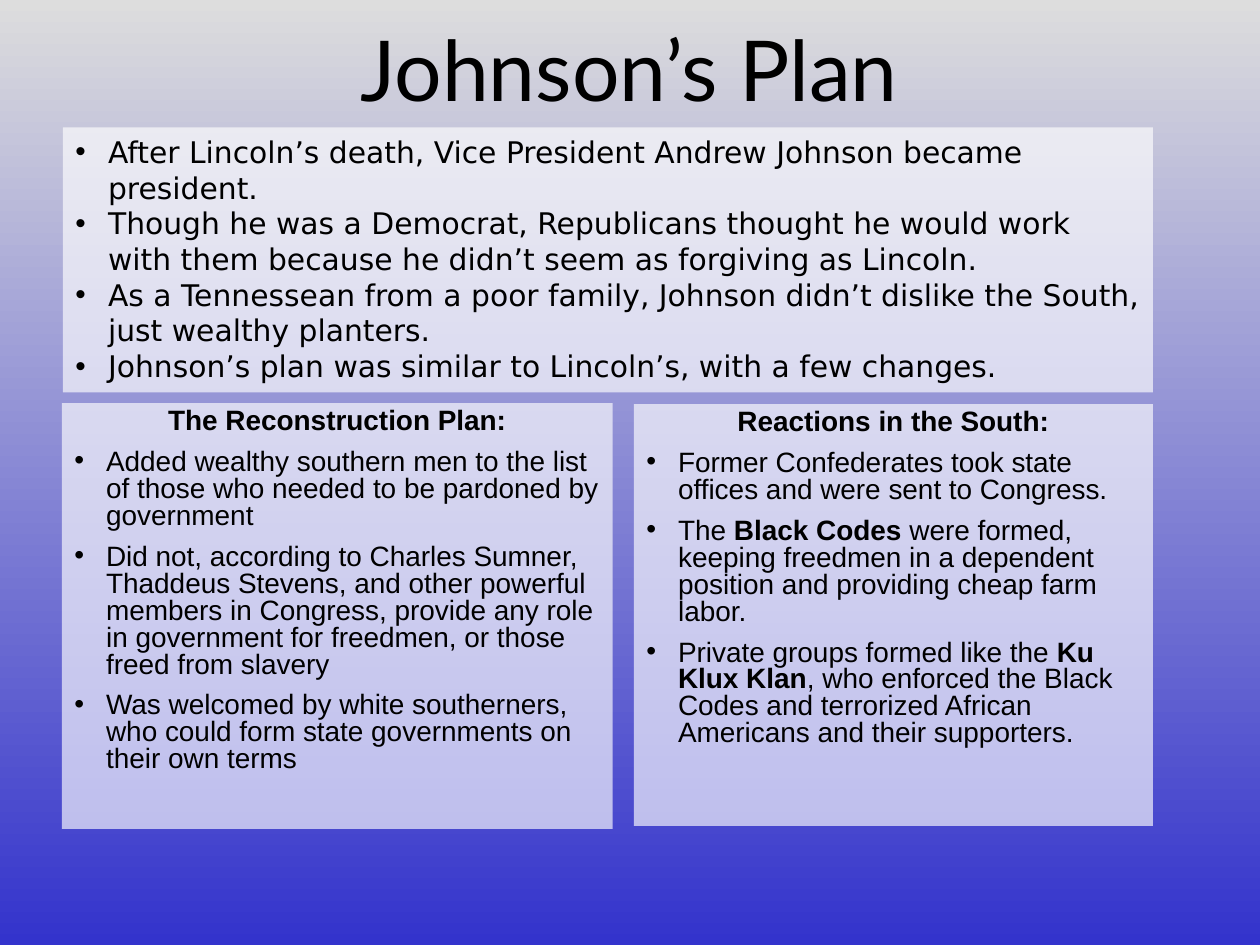
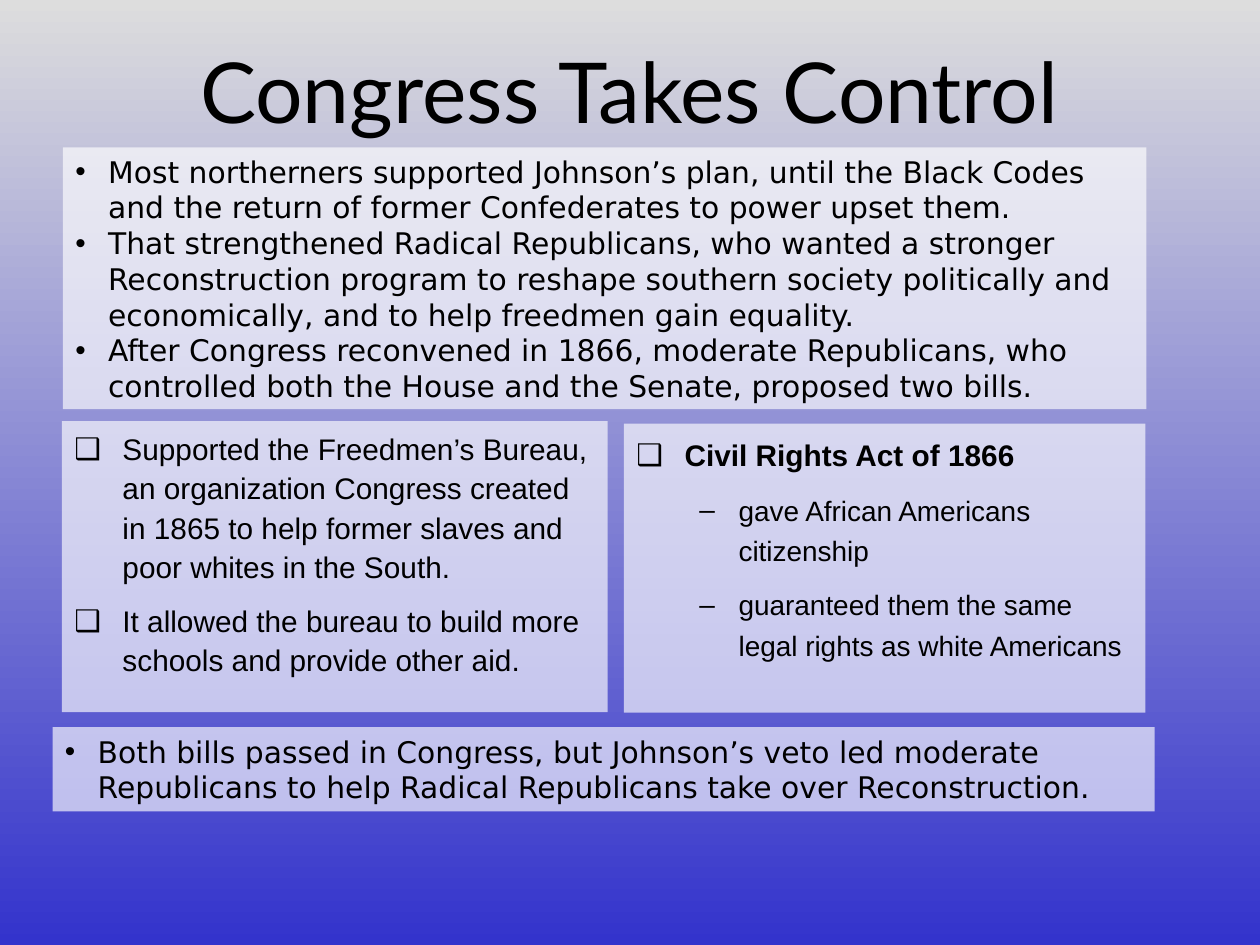
from dataclasses import dataclass, replace

from lxml import etree
from pptx import Presentation
from pptx.dml.color import RGBColor
from pptx.enum.shapes import MSO_SHAPE
from pptx.enum.text import MSO_ANCHOR, MSO_AUTO_SIZE, PP_ALIGN
from pptx.oxml.ns import qn
from pptx.util import Cm, Pt

RECTANGLE = MSO_SHAPE.RECTANGLE
TOP, MIDDLE = MSO_ANCHOR.TOP, MSO_ANCHOR.MIDDLE
FIT_TEXT = MSO_AUTO_SIZE.SHAPE_TO_FIT_TEXT
LEFT, CENTER = PP_ALIGN.LEFT, PP_ALIGN.CENTER

BLACK, WHITE = "000000", "FFFFFF"
SKY_TOP, SKY_BOTTOM = "DDDDDD", "3333CC"
PANEL_OPACITY = 65


@dataclass(frozen=True)
class TextStyle:
    font: str
    size: float
    bullet: str = ""
    margin: float = 0
    hanging: float = 0
    line_spacing: float = 1
    gap: float = 0
    bold: bool = False
    align: PP_ALIGN = LEFT
    level: int = 0


TITLE = TextStyle("Lato", 48, align=CENTER)
LEAD = TextStyle("DejaVu Sans", 17, "•", 0.66, 0.66)
POINT = TextStyle("Arial", 16, "•", 0.64, 0.64, 0.8, 0.5)
HEADING = replace(POINT, bullet="", bold=True, align=CENTER)
BILL = TextStyle("Arial", 17, "❑", 0.97, 0.97, 1.1, 0.5)
ACT = replace(BILL, line_spacing=1.2, bold=True)
PROVISION = replace(ACT, size=16, bullet="–", margin=2.06, hanging=0.79,
                    bold=False, level=1)


def color(value):
    return RGBColor.from_string(value)


class Deck:
    def __init__(self):
        self.presentation = Presentation()
        self.presentation.slide_width = Cm(25.4)
        self.presentation.slide_height = Cm(19.05)
        self.slide = None
        sky = self.presentation.slide_master.background.fill
        sky.gradient()
        sky.gradient_angle = 270
        for stop, shade, position in zip(sky.gradient_stops, (SKY_TOP, SKY_BOTTOM), (0, 1)):
            stop.color.rgb = color(shade)
            stop.position = position

    def new_slide(self, title, title_top):
        self.slide = self.presentation.slides.add_slide(self.presentation.slide_layouts[6])
        heading = self.slide.shapes.add_textbox(Cm(1.47), Cm(title_top), Cm(22.43), Cm(1.47))
        self.fill_text(heading.text_frame, [(TITLE, title)], MIDDLE)

    def panel(self, box, *lines):
        panel = self.slide.shapes.add_shape(RECTANGLE, *map(Cm, box))
        panel.shadow.inherit = False
        panel.line.fill.background()
        panel.fill.solid()
        panel.fill.fore_color.rgb = color(WHITE)
        tint = panel.element.spPr.find(qn("a:solidFill")).find(qn("a:srgbClr"))
        etree.SubElement(tint, qn("a:alpha"), val=str(PANEL_OPACITY * 1000))
        self.fill_text(panel.text_frame, lines, TOP)
        return panel

    def lead(self, box, *texts):
        panel = self.panel(box, *((LEAD, text) for text in texts))
        panel.text_frame.auto_size = FIT_TEXT

    def fill_text(self, frame, lines, anchor):
        frame.word_wrap = True
        frame.vertical_anchor = anchor
        for index, (style, text) in enumerate(lines):
            paragraph = frame.add_paragraph() if index else frame.paragraphs[0]
            self.style_paragraph(paragraph, style)
            for part, piece in enumerate(text.split("**")):
                run = paragraph.add_run()
                run.text = piece
                if part % 2:
                    run.font.bold = True

    def style_paragraph(self, paragraph, style):
        paragraph.alignment = style.align
        paragraph.level = style.level
        paragraph.line_spacing = style.line_spacing
        paragraph.space_before = Pt(style.size * style.gap)
        properties = paragraph._p.get_or_add_pPr()
        properties.set("marL", str(Cm(style.margin)))
        properties.set("indent", str(-Cm(style.hanging)))
        if style.bullet:
            etree.SubElement(properties, qn("a:buFont"), typeface="Arial")
            etree.SubElement(properties, qn("a:buChar"), char=style.bullet)
        else:
            etree.SubElement(properties, qn("a:buNone"))
        font = paragraph.font
        font.name = style.font
        font.size = Pt(style.size)
        font.bold = style.bold
        font.color.rgb = color(BLACK)


def johnsons_plan(deck):
    deck.new_slide("Johnson’s Plan", 0.64)
    deck.panel(
        (1.25, 8.13, 11.1, 8.58),
        (HEADING, "The Reconstruction Plan:"),
        (POINT, "Added wealthy southern men to the list of those who needed to be "
                "pardoned by government"),
        (POINT, "Did not, according to Charles Sumner, Thaddeus Stevens, and other "
                "powerful members in Congress, provide any role in government for "
                "freedmen, or those freed from slavery"),
        (POINT, "Was welcomed by white southerners, who could form state governments "
                "on their own terms"),
    )
    deck.panel(
        (12.78, 8.15, 10.46, 8.5),
        (HEADING, "Reactions in the South:"),
        (POINT, "Former Confederates took state offices and were sent to Congress."),
        (POINT, "The **Black Codes** were formed, keeping freedmen in a dependent "
                "position and providing cheap farm labor."),
        (POINT, "Private groups formed like the **Ku Klux Klan**, who enforced the "
                "Black Codes and terrorized African Americans and their supporters."),
    )
    deck.lead(
        (1.27, 2.57, 21.97, 5.34),
        "After Lincoln’s death, Vice President Andrew Johnson became president.",
        "Though he was a Democrat, Republicans thought he would work with them "
        "because he didn’t seem as forgiving as Lincoln.",
        "As a Tennessean from a poor family, Johnson didn’t dislike the South, "
        "just wealthy planters.",
        "Johnson’s plan was similar to Lincoln’s, with a few changes.",
    )


def congress_takes_control(deck):
    deck.new_slide("Congress Takes Control", 1.07)
    deck.panel(
        (1.25, 8.49, 11, 5.87),
        (BILL, "Supported the Freedmen’s Bureau, an organization Congress created in "
               "1865 to help former slaves and poor whites in the South."),
        (BILL, "It allowed the bureau to build more schools and provide other aid."),
    )
    deck.panel(
        (12.58, 8.54, 10.51, 5.83),
        (ACT, "Civil Rights Act of 1866"),
        (PROVISION, "gave African Americans citizenship"),
        (PROVISION, "guaranteed them the same legal rights as white Americans"),
    )
    deck.lead(
        (1.27, 2.97, 21.84, 5.28),
        "Most northerners supported Johnson’s plan, until the Black Codes and the "
        "return of former Confederates to power upset them.",
        "That strengthened Radical Republicans, who wanted a stronger Reconstruction "
        "program to reshape southern society politically and economically, and to "
        "help freedmen gain equality.",
        "After Congress reconvened in 1866, moderate Republicans, who controlled both "
        "the House and the Senate, proposed two bills.",
    )
    deck.lead(
        (1.06, 14.66, 22.22, 1.7),
        "Both bills passed in Congress, but Johnson’s veto led moderate Republicans "
        "to help Radical Republicans take over Reconstruction.",
    )


def main():
    deck = Deck()
    johnsons_plan(deck)
    congress_takes_control(deck)
    deck.presentation.save("out.pptx")


if __name__ == "__main__":
    main()
